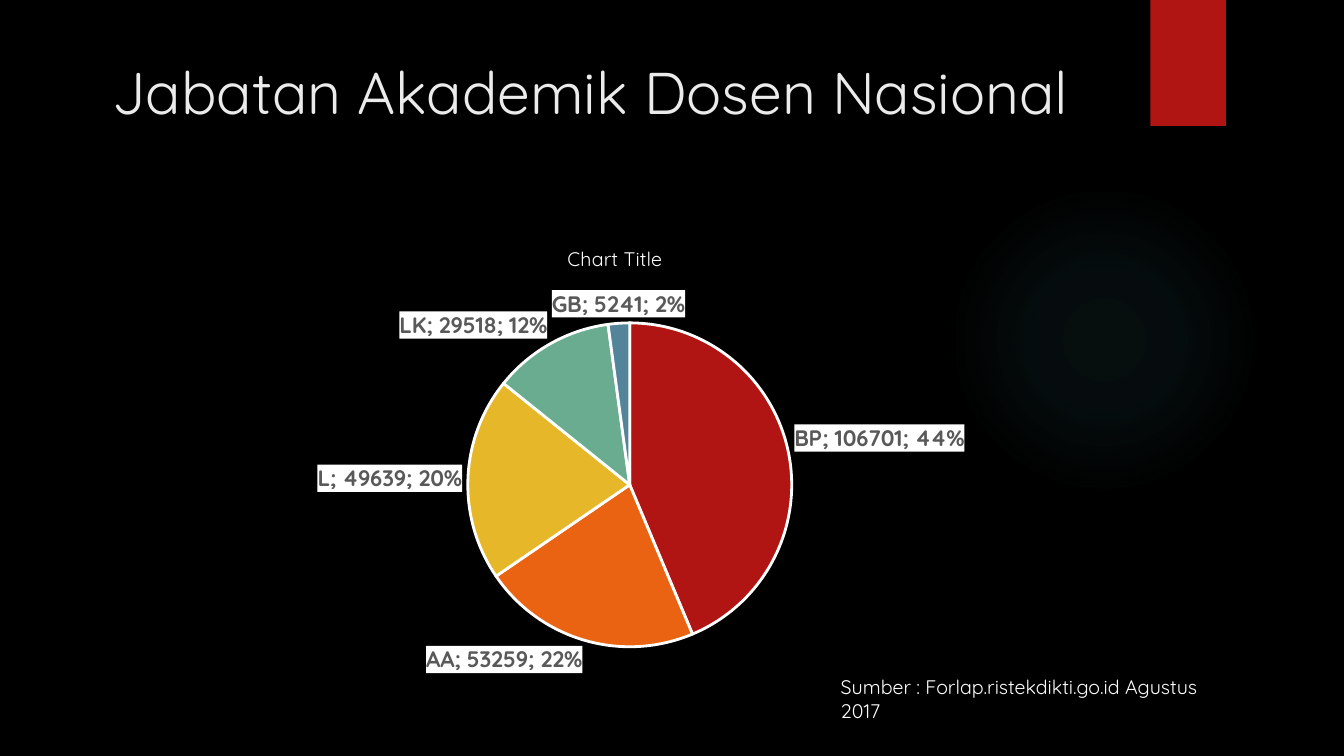
from lxml import etree
from pptx import Presentation
from pptx.chart.data import CategoryChartData as PieData
from pptx.dml.color import RGBColor
from pptx.enum.chart import XL_CHART_TYPE as Kind, XL_LABEL_POSITION as Spot
from pptx.enum.shapes import MSO_SHAPE as Shape
from pptx.enum.text import MSO_ANCHOR as Anchor, MSO_AUTO_SIZE as Fit, PP_ALIGN as Align
from pptx.oxml import parse_xml
from pptx.oxml.ns import nsdecls, qn
from pptx.util import Inches, Pt

FONT = "Quicksand"
WIDE, HIGH = 13.33, 7.5
STAFF = {  # rank: (lecturers, slice colour)
    "BP": (106701, "B01513"),
    "AA": (53259, "EA6312"),
    "L": (49639, "E6B729"),
    "LK": (29518, "6AAC90"),
    "GB": (5241, "54849A"),
}


def color(code):
    return RGBColor.from_string(code)


def place(box):
    return [Inches(n) for n in box]


def style(font, size, tint, bold=False):
    font.name, font.size, font.bold = FONT, Pt(size), bold
    font.color.rgb = color(tint)


def write(frame, text, size=14, tint="FFFFFF", align=Align.LEFT, fit=Fit.NONE):
    frame.word_wrap, frame.auto_size = True, fit
    frame.vertical_anchor = Anchor.TOP
    para = frame.paragraphs[0]
    para.alignment = align
    run = para.add_run()
    run.text = text
    style(run.font, size, tint)


def add_plain(slide, kind, box, fill):
    item = slide.shapes.add_shape(kind, *place(box))
    item.shadow.inherit = False
    item.fill.solid()
    item.fill.fore_color.rgb = color(fill)
    item.line.fill.background()
    return item


def add_decor(slide):
    # Faint round glow
    glow = add_plain(slide, Shape.OVAL, (9.41, 1.83, 3.08, 3.08), "50B9C1")
    stops = "".join(
        f'<a:gs pos="{pos * 1000}"><a:srgbClr val="50B9C1">'
        f'<a:alpha val="{alpha * 1000}"/></a:srgbClr></a:gs>'
        for pos, alpha in ((0, 7), (36, 6), (69, 0)))
    fade = parse_xml(
        f'<a:gradFill {nsdecls("a")}><a:gsLst>{stops}</a:gsLst><a:path path="circle">'
        '<a:fillToRect l="50000" t="50000" r="50000" b="50000"/></a:path></a:gradFill>')
    props = glow.element.spPr
    props.replace(props.find(qn("a:solidFill")), fade)
    # Red tab at the top edge
    add_plain(slide, Shape.RECTANGLE, (11.41, 0, 0.75, 1.25), "B01513")


def add_title(slide, box):
    title = slide.shapes.title
    title.left, title.top, title.width, title.height = place(box)
    write(title.text_frame, "Jabatan Akademik Dosen Nasional", 42, "EBEBEB", Align.CENTER)


def format_labels(plot):
    plot.has_data_labels = True
    labels = plot.data_labels
    labels.show_value = labels.show_percentage = labels.show_category_name = True
    labels.position = Spot.OUTSIDE_END
    style(labels.font, 16, "595959", True)
    # White label boxes and a semicolon between the parts
    node = labels._element
    node.find(qn("c:txPr")).addprevious(parse_xml(
        f'<c:spPr {nsdecls("c", "a")}><a:solidFill><a:srgbClr val="FFFFFF"/>'
        '</a:solidFill></c:spPr>'))
    mark = etree.Element(qn("c:separator"))
    mark.text = "; "
    node.find(qn("c:showBubbleSize")).addnext(mark)


def add_pie(slide, box):
    data = PieData(number_format="General")
    data.categories = list(STAFF)
    data.add_series("Series 1", [count for count, _ in STAFF.values()])
    chart = slide.shapes.add_chart(Kind.PIE, *place(box), data).chart
    style(chart.font, 10, "FFFFFF")
    chart.has_legend = False
    chart.has_title = True
    write(chart.chart_title.text_frame, "Chart Title", align=Align.CENTER)
    plot = chart.plots[0]
    plot.vary_by_categories = True
    for spot, (_, tint) in enumerate(STAFF.values()):
        part = plot.series[0].points[spot].format
        part.fill.solid()
        part.fill.fore_color.rgb = color(tint)
        part.line.color.rgb = color("FFFFFF")
        part.line.width = Pt(2)
    format_labels(plot)
    # Pie position as shares of the chart
    area = chart._chartSpace.chart.plotArea
    for old in area.findall(qn("c:layout")):
        area.remove(old)
    sides = "".join(f'<c:{key} val="{share}"/>' for key, share in
                    (("x", 0.35), ("y", 0.21), ("w", 0.33), ("h", 0.7)))
    area.insert(0, parse_xml(
        f'<c:layout {nsdecls("c")}><c:manualLayout><c:layoutTarget val="inner"/>'
        f'<c:xMode val="edge"/><c:yMode val="edge"/>{sides}</c:manualLayout></c:layout>'))


def add_source(slide, box):
    note = slide.shapes.add_textbox(*place(box))
    write(note.text_frame, "Sumber : Forlap.ristekdikti.go.id Agustus 2017",
          fit=Fit.SHAPE_TO_FIT_TEXT)


def main():
    deck = Presentation()
    deck.slide_width, deck.slide_height = place((WIDE, HIGH))
    slide = deck.slides.add_slide(deck.slide_layouts[5])
    slide.background.fill.solid()
    slide.background.fill.fore_color.rgb = color("000000")
    add_decor(slide)
    add_title(slide, (0.71, 0.5, 10.29, 1.53))
    add_pie(slide, (1.21, 2.24, 9.78, 4.59))
    add_source(slide, (8.24, 6.65, 3.94, 0.57))
    deck.save("out.pptx")


if __name__ == "__main__":
    main()
